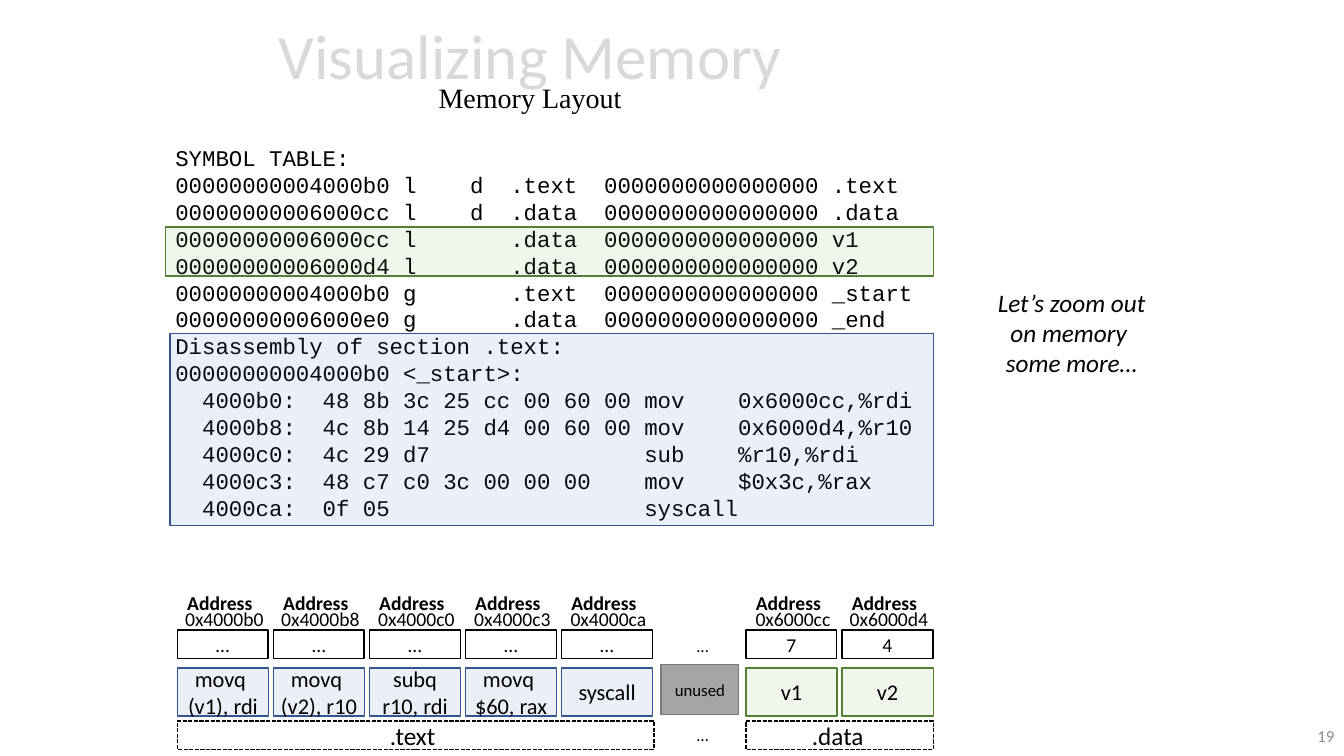
import pptx
import pptx.dml.color
import pptx.enum.dml
import pptx.enum.shapes
import pptx.enum.text
import pptx.oxml.ns
import pptx.util
from dataclasses import dataclass
from lxml import etree

Cm = pptx.util.Cm
ALIGN = pptx.enum.text.PP_ALIGN
ANCHOR = pptx.enum.text.MSO_ANCHOR


@dataclass(frozen=True)
class Theme:
    font: str = "Calibri"
    code_font: str = "Courier New"
    subtitle_font: str = "Times New Roman"
    black: str = "000000"
    white: str = "FFFFFF"
    title_gray: str = "D9D9D9"
    number_gray: str = "8C8C8C"
    unused_fill: str = "A5A5A5"
    unused_line: str = "7A7A7A"
    text_fill: str = "4472C4"
    text_line: str = "325491"
    data_fill: str = "70AD47"
    data_line: str = "538035"
    title_size: int = 45
    subtitle_size: int = 20
    large: int = 18
    medium: int = 16
    small: int = 14
    tiny: int = 12


theme = Theme()
rgb = pptx.dml.color.RGBColor.from_string

presentation = pptx.Presentation()
presentation.slide_width = Cm(33.87)
presentation.slide_height = Cm(19.05)
slide = presentation.slides.add_slide(presentation.slide_layouts[6])


def add_text(shape, lines, size, font=theme.font, color=theme.black, align=ALIGN.CENTER,
             anchor=ANCHOR.MIDDLE, inset=(0.25, 0.13), wrap=True, grow=False,
             bold=False, italic=False):
    frame = shape.text_frame
    frame.word_wrap = wrap
    if grow:
        frame.auto_size = pptx.enum.text.MSO_AUTO_SIZE.SHAPE_TO_FIT_TEXT
    frame.vertical_anchor = anchor
    frame.margin_left = frame.margin_right = Cm(inset[0])
    frame.margin_top = frame.margin_bottom = Cm(inset[1])
    for index, line in enumerate(lines):
        paragraph = frame.add_paragraph() if index else frame.paragraphs[0]
        paragraph.alignment = align
        run = paragraph.add_run()
        run.text = line
        run.font.name = font
        run.font.size = pptx.util.Pt(size)
        run.font.bold = bold
        run.font.italic = italic
        run.font.color.rgb = rgb(color)


def add_rectangle(left, top, width, height, line, fill=None, opacity=100, dashed=False):
    shape = slide.shapes.add_shape(pptx.enum.shapes.MSO_SHAPE.RECTANGLE,
                                   Cm(left), Cm(top), Cm(width), Cm(height))
    shape.shadow.inherit = False
    shape.line.color.rgb = rgb(line)
    shape.line.width = pptx.util.Pt(1)
    if dashed:
        shape.line.dash_style = pptx.enum.dml.MSO_LINE.SQUARE_DOT
    if fill is None:
        shape.fill.background()
        return shape
    shape.fill.solid()
    shape.fill.fore_color.rgb = rgb(fill)
    if opacity < 100:
        color = shape._element.spPr.find(".//" + pptx.oxml.ns.qn("a:srgbClr"))
        etree.SubElement(color, pptx.oxml.ns.qn("a:alpha")).set("val", str(opacity * 1000))
    return shape


# Title and subtitle in one paragraph
title = slide.shapes.add_textbox(Cm(0.66), Cm(0.05), Cm(25.4), Cm(3.68))
add_text(title, ["Visualizing Memory"], theme.title_size, color=theme.title_gray)
heading = title.text_frame.paragraphs[0]
heading.line_spacing = 0.7
heading.add_line_break()
subtitle = heading.add_run()
subtitle.text = "Memory Layout"
subtitle.font.name = theme.subtitle_font
subtitle.font.size = pptx.util.Pt(theme.subtitle_size)
subtitle.font.color.rgb = rgb(theme.black)

# Slide number
number = slide.shapes.add_textbox(Cm(26.26), Cm(18.03), Cm(7.62), Cm(1.02))
add_text(number, ["19"], theme.tiny, color=theme.number_gray, align=ALIGN.RIGHT)

# Symbol table and disassembly
listing_lines = [
    "SYMBOL TABLE:",
    "00000000004000b0 l    d  .text  0000000000000000 .text",
    "00000000006000cc l    d  .data  0000000000000000 .data",
    "00000000006000cc l       .data  0000000000000000 v1",
    "00000000006000d4 l       .data  0000000000000000 v2",
    "00000000004000b0 g       .text  0000000000000000 _start",
    "00000000006000e0 g       .data  0000000000000000 _end",
    "Disassembly of section .text:",
    "00000000004000b0 <_start>:",
    "  4000b0:  48 8b 3c 25 cc 00 60 00 mov    0x6000cc,%rdi",
    "  4000b8:  4c 8b 14 25 d4 00 60 00 mov    0x6000d4,%r10",
    "  4000c0:  4c 29 d7                sub    %r10,%rdi",
    "  4000c3:  48 c7 c0 3c 00 00 00    mov    $0x3c,%rax",
    "  4000ca:  0f 05                   syscall",
]
listing = slide.shapes.add_textbox(Cm(4.17), Cm(3.51), Cm(19.71), Cm(9.83))
add_text(listing, listing_lines, theme.medium, font=theme.code_font, align=ALIGN.LEFT,
         anchor=ANCHOR.TOP, wrap=False, grow=True)
add_rectangle(4.17, 5.72, 19.35, 1.24, theme.data_line, theme.data_fill, 10)
add_rectangle(4.29, 8.41, 19.23, 4.83, theme.text_line, theme.text_fill, 10)

# Side remark
remark = slide.shapes.add_textbox(Cm(24.87), Cm(7.11), Cm(4.27), Cm(2.57))
add_text(remark, ["Let’s zoom out", "on memory ", "some more…"], theme.large,
         anchor=ANCHOR.TOP, wrap=False, grow=True, italic=True)

# Memory sections: name, left, width, label left, colours, columns
sections = [
    (".text", 4.47, 12.01, 9.2, theme.text_line, theme.text_fill, [
        ("0x4000b0", "…", ["movq ", "(v1), rdi"]),
        ("0x4000b8", "…", ["movq ", "(v2), r10"]),
        ("0x4000c0", "…", ["subq", "r10, rdi"]),
        ("0x4000c3", "…", ["movq ", "$60, rax"]),
        ("0x4000ca", "…", ["syscall"]),
    ]),
    (".data", 18.8, 4.72, 19.91, theme.data_line, theme.data_fill, [
        ("0x6000cc", "7", ["v1"]),
        ("0x6000d4", "4", ["v2"]),
    ]),
]
column_pitch = 2.42
for name, section_left, section_width, label_left, line, fill, columns in sections:
    for index, (address, value, content) in enumerate(columns):
        left = section_left + index * column_pitch
        # Address heading above the cell
        group = slide.shapes.add_group_shape()
        for label, offset, top, width, bold in [("Address", 0.08, 14.76, 1.98, True),
                                                (address, -0.1, 15.16, 2.57, False)]:
            box = group.shapes.add_textbox(Cm(left + offset), Cm(top), Cm(width), Cm(0.86))
            add_text(box, [label], theme.small, anchor=ANCHOR.TOP, inset=(0, 0.13),
                     grow=True, bold=bold)
        # Value cell and its meaning
        cell = add_rectangle(left, 15.88, 2.29, 0.71, theme.black, theme.white)
        add_text(cell, [value], theme.small, inset=(0, 0.13))
        meaning = add_rectangle(left, 16.83, 2.3, 1.21, line, fill, 10)
        add_text(meaning, content, theme.medium, inset=(0, 0))
    # Dashed bracket with the section name
    add_rectangle(section_left, 18.17, section_width, 0.72, theme.black, dashed=True)
    label = slide.shapes.add_textbox(Cm(label_left), Cm(18.03), Cm(2.4), Cm(1.02))
    add_text(label, [name], theme.large, anchor=ANCHOR.TOP, inset=(0, 0.13))

# Unused gap between the sections
unused = add_rectangle(16.66, 16.74, 1.96, 1.27, theme.unused_line, theme.unused_fill)
add_text(unused, ["unused"], theme.tiny, inset=(0, 0.13))
for top in (15.88, 18.14):
    dots = slide.shapes.add_textbox(Cm(17.31), Cm(top), Cm(0.81), Cm(0.76))
    add_text(dots, ["…"], theme.tiny, align=ALIGN.LEFT, anchor=ANCHOR.TOP,
             wrap=False, grow=True)

presentation.save("out.pptx")
